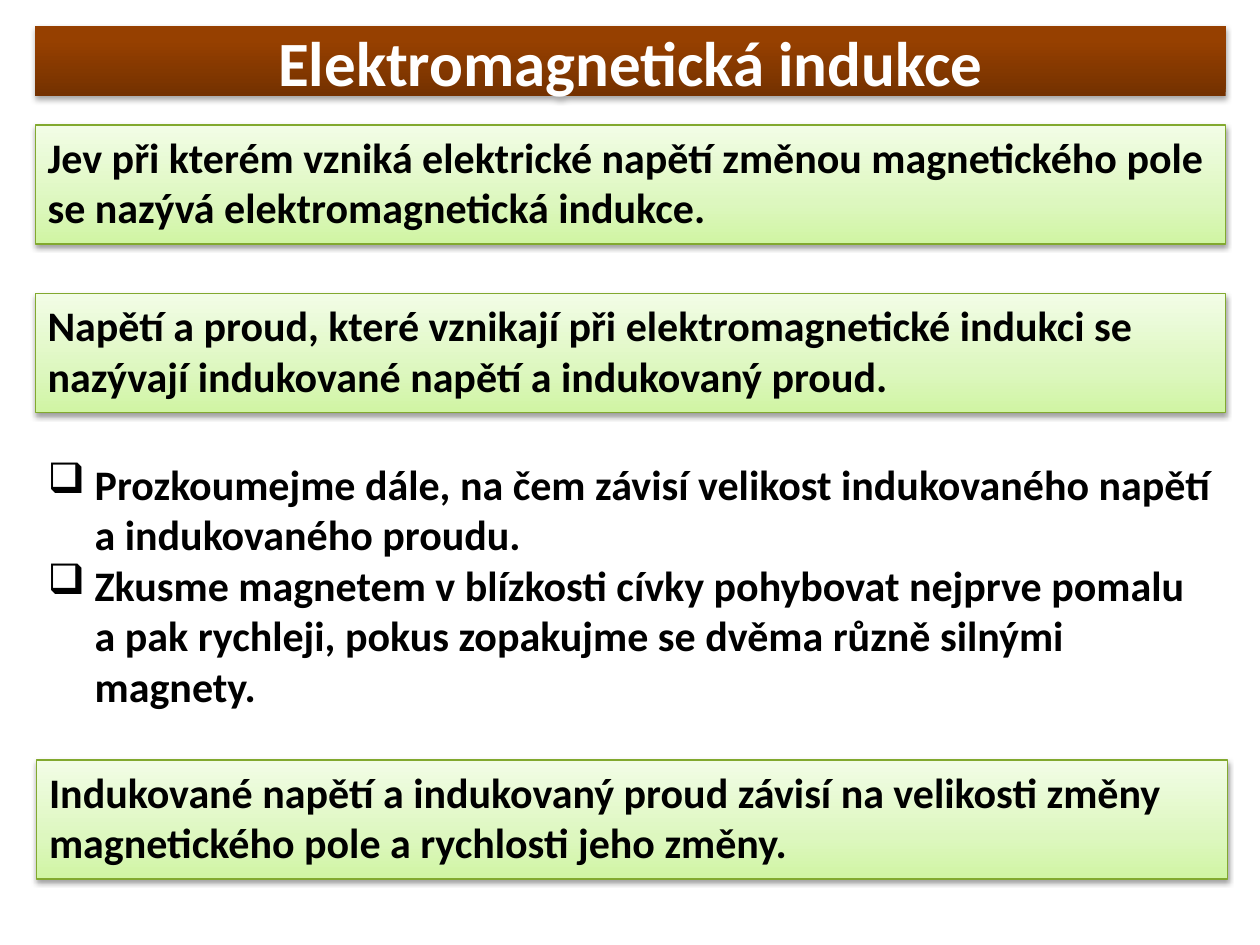
from copy import deepcopy

from lxml.etree import SubElement
from pptx import Presentation
from pptx.dml.color import RGBColor
from pptx.enum.shapes import MSO_SHAPE as Shape
from pptx.enum.text import MSO_ANCHOR as Anchor, PP_ALIGN as Align
from pptx.oxml.ns import qn
from pptx.util import Cm, Pt

COLORS = {
    "title": ["743100", "964000", "974100"],
    "green": ["D0F5A3", "DDF7BF", "F2FDE6"],
    "border": "82A92F",
    "white": "FFFFFF",
    "black": "000000",
}
LEFT, WIDTH = 0.71, 24


def add_text(paragraph, text, size=24, color="black"):
    run = paragraph.add_run()
    run.text = text
    run.font.name = "Calibri"
    run.font.size = Pt(size)
    run.font.bold = True
    run.font.color.rgb = RGBColor.from_string(COLORS[color])


def add_panel(left, top, height, gradient, middle_stop, shadow_alpha, shadow_distance):
    panel = slide.shapes.add_shape(
        Shape.RECTANGLE, Cm(left), Cm(top), Cm(WIDTH), Cm(height))
    panel.text_frame.word_wrap = True
    # Three-stop gradient running upwards
    panel.fill.gradient()
    panel.fill.gradient_angle = 90
    stop_list = panel.fill._xPr.find(qn("a:gradFill")).find(qn("a:gsLst"))
    stop_list.append(deepcopy(stop_list[-1]))
    positions = (0, middle_stop, 1)
    for stop, position, color in zip(panel.fill.gradient_stops, positions, COLORS[gradient]):
        stop.position = position
        stop.color.rgb = RGBColor.from_string(color)
    # Soft shadow straight below
    panel.shadow.inherit = False
    effects = panel.fill._xPr.find(qn("a:effectLst"))
    shadow = SubElement(effects, qn("a:outerShdw"), blurRad=str(Pt(3.1)),
                        dist=str(Pt(shadow_distance)), dir="5400000", rotWithShape="0")
    shade = SubElement(shadow, qn("a:srgbClr"), val=COLORS["black"])
    SubElement(shade, qn("a:alpha"), val=str(shadow_alpha * 1000))
    return panel


prs = Presentation()
prs.slide_width, prs.slide_height = Cm(25.4), Cm(19.05)
slide = prs.slides.add_slide(prs.slide_layouts[6])

# Title bar
title = add_panel(LEFT, 0.53, 1.4, "title", 0.8, 35, 1.8)
title.line.fill.background()
title.text_frame.vertical_anchor = Anchor.MIDDLE
heading = title.text_frame.paragraphs[0]
heading.alignment = Align.CENTER
add_text(heading, "Elektromagnetická indukce", 36, "white")

# Green statements
statements = [
    (LEFT, 2.52, "Jev při kterém vzniká elektrické napětí změnou magnetického pole "
                 "se nazývá elektromagnetická indukce."),
    (LEFT, 5.92, "Napětí a proud, které vznikají při elektromagnetické indukci se "
                 "nazývají indukované napětí a indukovaný proud."),
    (0.74, 15.32, "Indukované napětí a indukovaný proud závisí na velikosti změny "
                  "magnetického pole a rychlosti jeho změny."),
]
for left, top, text in statements:
    statement = add_panel(left, top, 2.4, "green", 0.35, 38, 1.6)
    statement.line.color.rgb = RGBColor.from_string(COLORS["border"])
    statement.line.width = Pt(0.75)
    statement.text_frame.vertical_anchor = Anchor.TOP
    sentence = statement.text_frame.paragraphs[0]
    sentence.alignment = Align.LEFT
    add_text(sentence, text)

# Tasks with box bullets
tasks = [
    "Prozkoumejme dále, na čem závisí velikost indukovaného napětí "
    "a indukovaného proudu.",
    "Zkusme magnetem v blízkosti cívky pohybovat nejprve pomalu "
    "a pak rychleji, pokus zopakujme se dvěma různě silnými magnety.",
]
task_frame = slide.shapes.add_textbox(
    Cm(LEFT), Cm(9.12), Cm(WIDTH), Cm(5.8)).text_frame
task_frame.word_wrap = True
for number, text in enumerate(tasks):
    task = task_frame.add_paragraph() if number else task_frame.paragraphs[0]
    properties = task._p.get_or_add_pPr()
    properties.set("marL", str(Cm(0.95)))
    properties.set("indent", str(-Cm(0.95)))
    SubElement(properties, qn("a:buChar"), char="❑")
    add_text(task, text)

prs.save("out.pptx")
